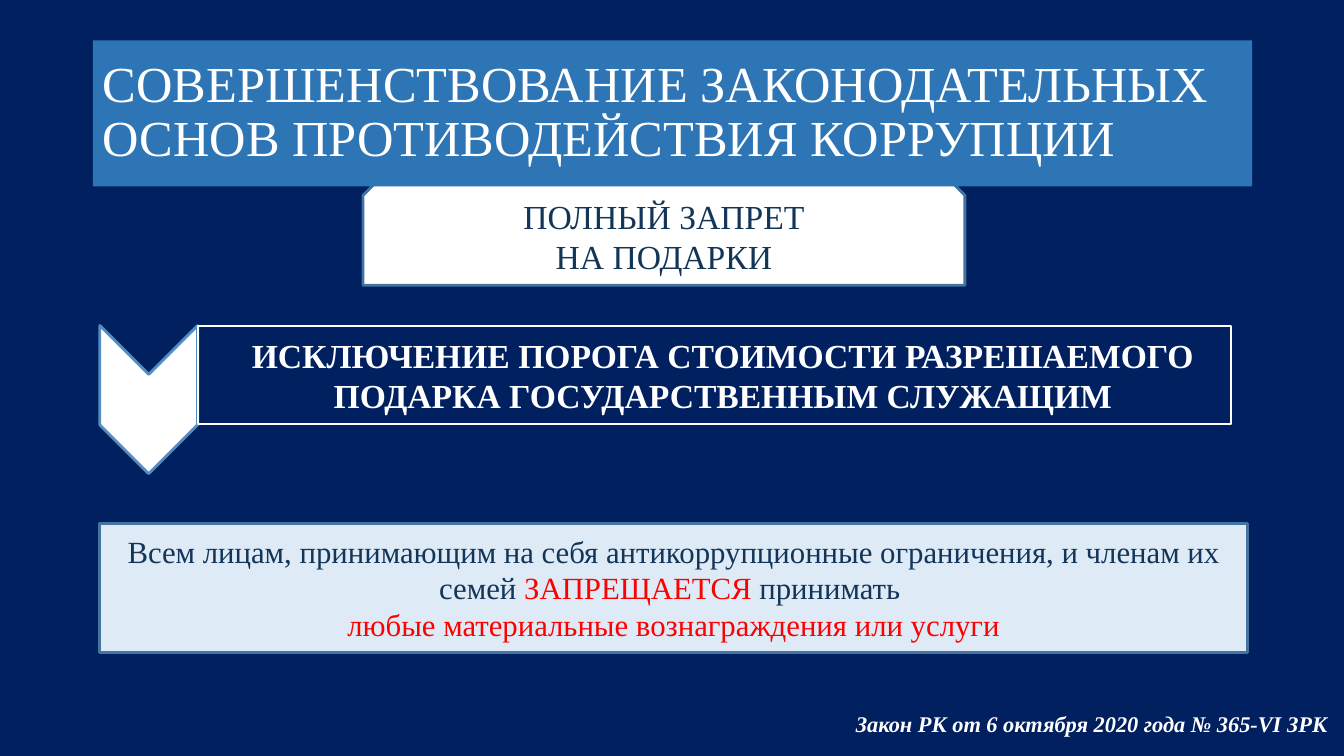
from pptx import Presentation
from pptx.dml.color import RGBColor
from pptx.enum import shapes, text
from pptx.util import Inches, Pt

NAVY = RGBColor(0x00, 0x20, 0x60)
BLUE = RGBColor(0x2E, 0x75, 0xB6)
PALE = RGBColor(0xDE, 0xEB, 0xF7)
EDGE = RGBColor(0x43, 0x73, 0x9E)
CHEVRON_EDGE = RGBColor(0x53, 0x8D, 0xC1)
INK = RGBColor(0x12, 0x35, 0x58)
RED = RGBColor(0xFF, 0x00, 0x00)
WHITE = RGBColor(0xFF, 0xFF, 0xFF)
FONT = "Times New Roman"
CENTER = text.PP_ALIGN.CENTER


def write(frame, paragraphs, size, align=None, bold=False, italic=False, spacing=None):
    """Fill a text frame with paragraphs, each a list of (words, colour) runs."""
    frame.word_wrap = True
    frame.vertical_anchor = text.MSO_ANCHOR.MIDDLE
    for index, runs in enumerate(paragraphs):
        paragraph = frame.add_paragraph() if index else frame.paragraphs[0]
        paragraph.alignment = align
        paragraph.line_spacing = spacing
        for words, colour in runs:
            run = paragraph.add_run()
            run.text = words
            font = run.font
            font.name, font.size, font.bold, font.italic = FONT, Pt(size), bold, italic
            font.color.rgb = colour


def add_box(slide, kind, box, fill, line, width=2):
    """Add a flat preset shape in a box given in inches."""
    shape = slide.shapes.add_shape(kind, *map(Inches, box))
    shape.shadow.inherit = False
    if fill is None:
        shape.fill.background()
    else:
        shape.fill.solid()
        shape.fill.fore_color.rgb = fill
    shape.line.color.rgb = line
    shape.line.width = Pt(width)
    return shape


def add_title(slide, box):
    """Format the title as a blue band in front of the other shapes."""
    title = slide.shapes.title
    title.left, title.top, title.width, title.height = map(Inches, box)
    title.fill.solid()
    title.fill.fore_color.rgb = BLUE
    words = "СОВЕРШЕНСТВОВАНИЕ ЗАКОНОДАТЕЛЬНЫХ ОСНОВ ПРОТИВОДЕЙСТВИЯ КОРРУПЦИИ"
    write(title.text_frame, [[(words, WHITE)]], 36, text.PP_ALIGN.LEFT, spacing=0.9)
    title.element.getparent().append(title.element)


def add_topic(slide, box):
    """Add the snipped tab that hangs below the title."""
    tab = add_box(slide, shapes.MSO_SHAPE.SNIP_2_SAME_RECTANGLE, box, WHITE, EDGE)
    lines = ["ПОЛНЫЙ ЗАПРЕТ", "НА ПОДАРКИ"]
    write(tab.text_frame, [[(line, INK)] for line in lines], 24, CENTER)


def add_measure(slide, box):
    """Add a downward chevron at the left and the outlined measure beside it."""
    left, top, width, height = box
    chevron_width, chevron_length = 0.97, 1.47
    shift = (chevron_length - chevron_width) / 2
    chevron = add_box(slide, shapes.MSO_SHAPE.CHEVRON,
                      (left - shift, top + shift, chevron_length, chevron_width),
                      WHITE, CHEVRON_EDGE)
    chevron.rotation = 90
    panel = add_box(slide, shapes.MSO_SHAPE.RECTANGLE,
                    (left + chevron_width, top, width - chevron_width, height),
                    None, WHITE, 1.5)
    frame = panel.text_frame
    frame.margin_left = Inches(0.19)
    frame.margin_top = frame.margin_right = frame.margin_bottom = Inches(0.02)
    words = "ИСКЛЮЧЕНИЕ ПОРОГА СТОИМОСТИ РАЗРЕШАЕМОГО ПОДАРКА ГОСУДАРСТВЕННЫМ СЛУЖАЩИМ"
    write(frame, [[(words, WHITE)]], 24, CENTER, bold=True)


def add_ban(slide, box):
    """Add the pale panel that states the ban."""
    panel = add_box(slide, shapes.MSO_SHAPE.FLOWCHART_PROCESS, box, PALE, EDGE)
    write(panel.text_frame, [
        [("Всем лицам, принимающим на себя антикоррупционные ограничения, "
          "и членам их семей ", INK), ("ЗАПРЕЩАЕТСЯ", RED), (" принимать ", INK)],
        [("любые материальные вознаграждения или услуги", RED)],
    ], 22, CENTER)


def add_law(slide, box):
    """Add the reference to the law."""
    frame = slide.shapes.add_textbox(*map(Inches, box)).text_frame
    write(frame, [[("Закон РК от 6 октября 2020 года № 365-VI ЗРК", WHITE)]], 16,
          bold=True, italic=True)
    frame.vertical_anchor = text.MSO_ANCHOR.TOP
    frame.word_wrap = False


def main():
    """Build and save the slide."""
    presentation = Presentation()
    presentation.slide_width, presentation.slide_height = Inches(13.33), Inches(7.5)
    slide = presentation.slides.add_slide(presentation.slide_layouts[5])
    slide.background.fill.solid()
    slide.background.fill.fore_color.rgb = NAVY
    add_ban(slide, (0.99, 5.19, 11.38, 1.28))
    add_law(slide, (8.39, 7, 4.94, 0.37))
    add_topic(slide, (3.6, 1.76, 5.97, 1.07))
    add_measure(slide, (0.99, 3.23, 11.22, 0.98))
    add_title(slide, (0.92, 0.4, 11.5, 1.45))
    presentation.save("out.pptx")


if __name__ == "__main__":
    main()
